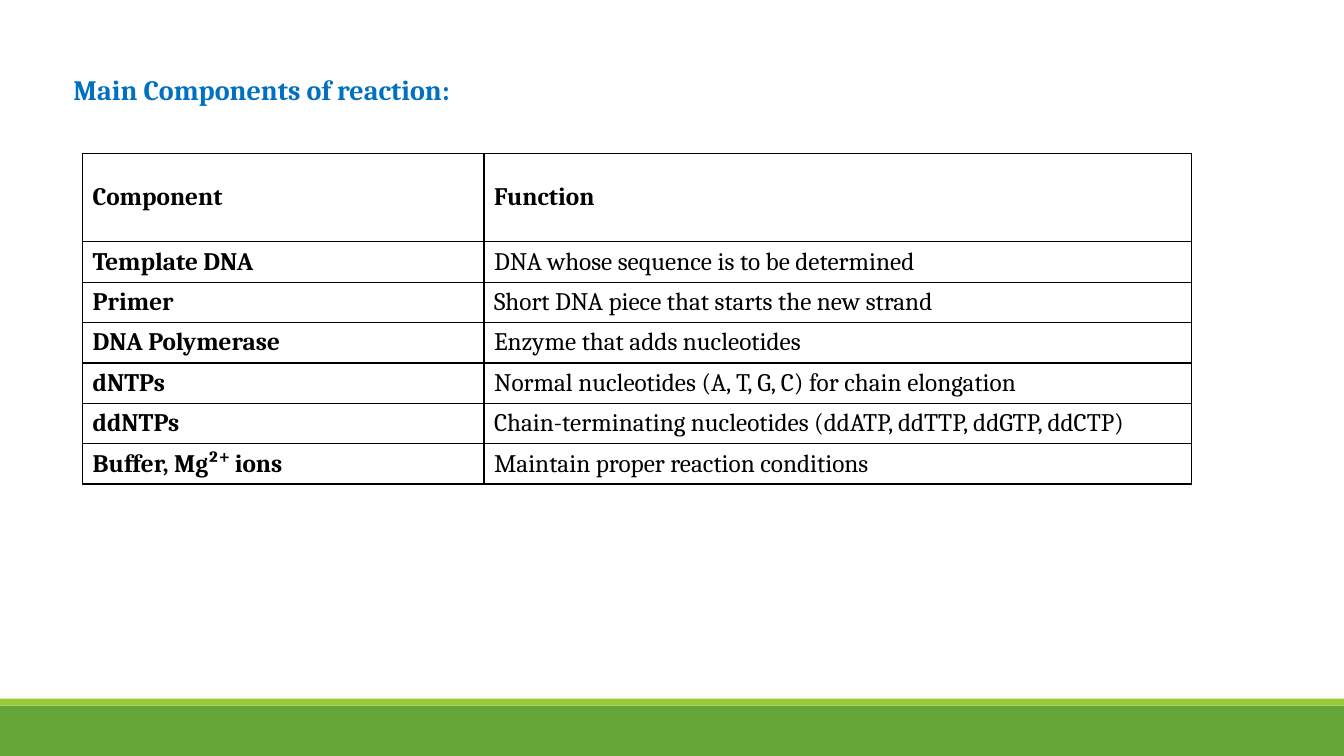
from dataclasses import dataclass

from lxml.etree import SubElement
from pptx import Presentation
from pptx.dml.color import RGBColor
from pptx.enum.shapes import MSO_SHAPE
from pptx.enum.text import MSO_ANCHOR
from pptx.oxml.ns import qn
from pptx.util import Inches, Pt

SLIDE_WIDTH = Inches(13.33)
SLIDE_HEIGHT = Inches(7.5)
FONT_NAME = "Cambria"
BLACK = "000000"
WHITE = "FFFFFF"


@dataclass(frozen=True)
class Area:
    left: float
    top: float
    width: float
    height: float

    def lengths(self) -> tuple[int, int, int, int]:
        return across(self.left), down(self.top), across(self.width), down(self.height)


@dataclass(frozen=True)
class Band:
    area: Area
    fill: str


@dataclass(frozen=True)
class Entry:
    component: str
    function: str


BANDS = [
    Band(Area(0, 93.33, 100, 6.67), "63A537"),
    Band(Area(0, 92.4, 100, 0.93), "99CB38"),
]
TITLE = "Main Components of reaction:"
TITLE_AREA = Area(4.73, 8.93, 95.27, 14.8)

TABLE_LEFT, TABLE_TOP = 6.15, 20.27
COLUMN_WIDTHS = [29.86, 52.66]
HEADER_HEIGHT, ENTRY_HEIGHT = 11.73, 5.33
HEADER = Entry("Component", "Function")
ENTRIES = [
    Entry("Template DNA", "DNA whose sequence is to be determined"),
    Entry("Primer", "Short DNA piece that starts the new strand"),
    Entry("DNA Polymerase", "Enzyme that adds nucleotides"),
    Entry("dNTPs", "Normal nucleotides (A, T, G, C) for chain elongation"),
    Entry("ddNTPs", "Chain-terminating nucleotides (ddATP, ddTTP, ddGTP, ddCTP)"),
    Entry("Buffer, Mg²⁺ ions", "Maintain proper reaction conditions"),
]


def across(percent: float) -> int:
    return round(SLIDE_WIDTH * percent / 100)


def down(percent: float) -> int:
    return round(SLIDE_HEIGHT * percent / 100)


def color(value: str) -> RGBColor:
    return RGBColor.from_string(value)


def write(text_frame, text: str, size: int, text_color: str, bold: bool) -> None:
    paragraph = text_frame.paragraphs[0]
    paragraph.text = text
    paragraph.font.name = FONT_NAME
    paragraph.font.size = Pt(size)
    paragraph.font.bold = bold
    paragraph.font.color.rgb = color(text_color)


def draw_band(slide, band: Band) -> None:
    shape = slide.shapes.add_shape(MSO_SHAPE.RECTANGLE, *band.area.lengths())
    shape.shadow.inherit = False
    shape.fill.solid()
    shape.fill.fore_color.rgb = color(band.fill)
    shape.line.fill.background()


def draw_title(slide) -> None:
    text_frame = slide.shapes.add_textbox(*TITLE_AREA.lengths()).text_frame
    text_frame.word_wrap = True
    write(text_frame, TITLE, 20, "0070C0", True)


def add_borders(cell) -> None:
    properties = cell._tc.get_or_add_tcPr()
    for side in ("a:lnL", "a:lnR", "a:lnT", "a:lnB"):
        border = SubElement(properties, qn(side), w=str(Pt(1)))
        fill = SubElement(border, qn("a:solidFill"))
        SubElement(fill, qn("a:srgbClr"), val=BLACK)


def fill_cell(cell, text: str, bold: bool) -> None:
    write(cell.text_frame, text, 18, BLACK, bold)
    cell.vertical_anchor = MSO_ANCHOR.MIDDLE
    add_borders(cell)
    cell.fill.solid()
    cell.fill.fore_color.rgb = color(WHITE)


def draw_table(slide) -> None:
    entries = [HEADER, *ENTRIES]
    heights = [HEADER_HEIGHT] + [ENTRY_HEIGHT] * len(ENTRIES)
    area = Area(TABLE_LEFT, TABLE_TOP, sum(COLUMN_WIDTHS), sum(heights))
    frame = slide.shapes.add_table(len(entries), len(COLUMN_WIDTHS), *area.lengths())
    table = frame.table
    for column, width in zip(table.columns, COLUMN_WIDTHS):
        column.width = across(width)
    for index, (entry, height) in enumerate(zip(entries, heights)):
        table.rows[index].height = down(height)
        fill_cell(table.cell(index, 0), entry.component, True)
        fill_cell(table.cell(index, 1), entry.function, entry is HEADER)


def main() -> None:
    presentation = Presentation()
    presentation.slide_width = SLIDE_WIDTH
    presentation.slide_height = SLIDE_HEIGHT
    slide = presentation.slides.add_slide(presentation.slide_layouts[6])
    for band in BANDS:
        draw_band(slide, band)
    draw_title(slide)
    draw_table(slide)
    presentation.save("out.pptx")


if __name__ == "__main__":
    main()
